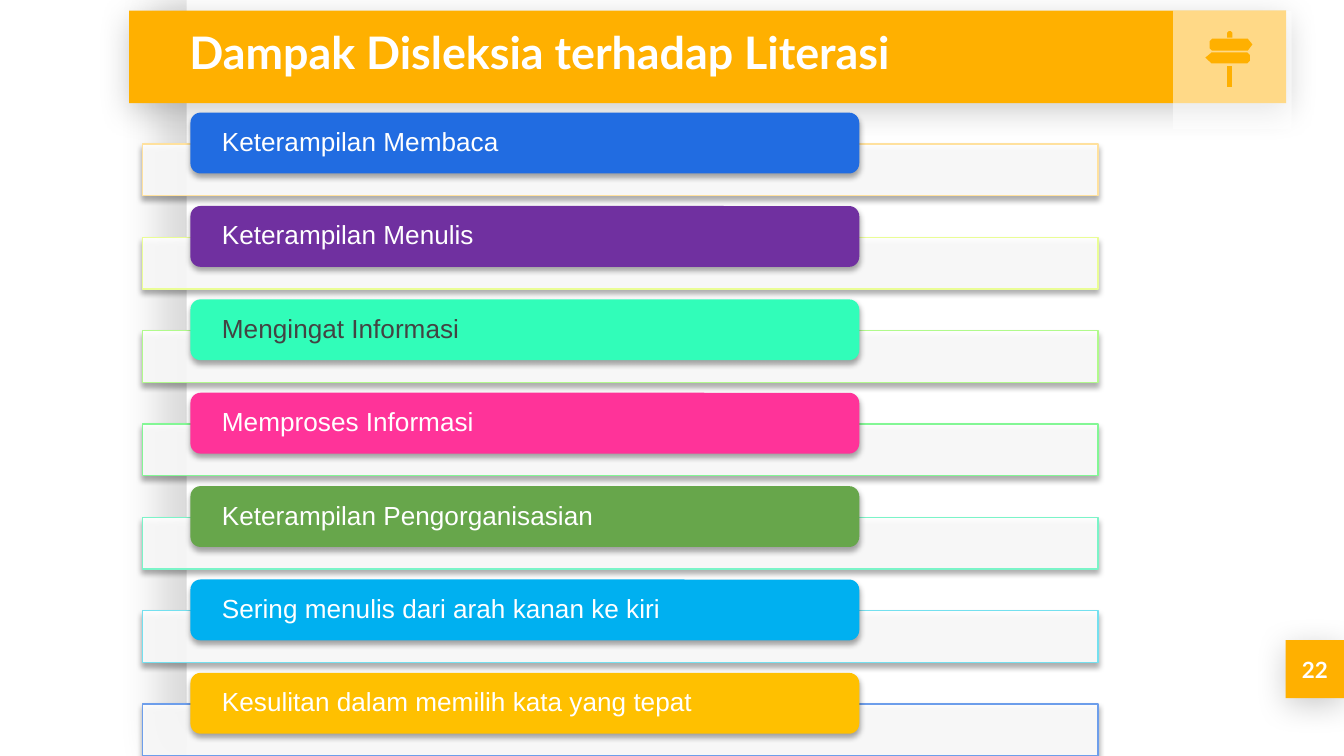
from lxml import etree
from pptx import Presentation
from pptx.dml.color import RGBColor
from pptx.enum.shapes import MSO_SHAPE
from pptx.enum.text import MSO_ANCHOR, MSO_AUTO_SIZE, PP_ALIGN
from pptx.oxml.ns import qn
from pptx.util import Cm, Pt

RECTANGLE = MSO_SHAPE.RECTANGLE
ROUNDED = MSO_SHAPE.ROUNDED_RECTANGLE
LEFT, CENTER = PP_ALIGN.LEFT, PP_ALIGN.CENTER

TITLE_ONLY_LAYOUT = 5
AMBER, WHITE, GRAY = "FFB000", "FFFFFF", "434343"

# Shadows: opacity in percent, blur and distance in points, direction in degrees
PAGE_SHADOW = (15, 22.5, 15, 180)
HEADER_SHADOW = (20, 16.9, 3.8, 90)
ROW_SHADOW = (35, 3.1, 1.8, 90)

ROW_TOP, ROW_PITCH = 2.13, 1.765
# Label, label fill, label text colour, frame line
ROWS = [
    ("Keterampilan Membaca", "216CE1", WHITE, "FFE19E"),
    ("Keterampilan Menulis", "7030A0", WHITE, "EAFD95"),
    ("Mengingat Informasi", "31FDB9", GRAY, "B1FA8C"),
    ("Memproses Informasi", "FF3399", WHITE, "83F795"),
    ("Keterampilan Pengorganisasian", "67A64B", WHITE, "7BF4C8"),
    ("Sering menulis dari arah kanan ke kiri", "00B0F0", WHITE, "74E0EF"),
    ("Kesulitan dalam memilih kata yang tepat", "FFC000", WHITE, "6D9EEB"),
]

# Signpost outlines, in hundredths of a centimetre
SIGNPOST = [
    [(2291, 73), (2358, 73), (2367, 84), (2358, 96), (2291, 96),
     (2286, 91), (2286, 78)],
    [(2290, 99), (2357, 99), (2362, 104), (2362, 115), (2357, 120),
     (2290, 120), (2278, 109)],
    [(2322, 59), (2326, 59), (2329, 62), (2329, 71), (2319, 71), (2319, 62)],
    [(2319, 125), (2329, 125), (2329, 165), (2319, 165)],
]


def set_values(target, values):
    for name, value in values.items():
        setattr(target, name, value)


def color(hex_string):
    return RGBColor.from_string(hex_string)


def paint(shape, fill, opacity=100, line=None):
    shape.shadow.inherit = False
    shape.fill.solid()
    shape.fill.fore_color.rgb = color(fill)
    if opacity < 100:
        tone = shape.fill._xPr.find(".//" + qn("a:srgbClr"))
        etree.SubElement(tone, qn("a:alpha"), val=str(opacity * 1000))
    if line:
        shape.line.color.rgb = color(line)
        shape.line.width = Pt(0.75)
    else:
        shape.line.fill.background()


def add_shadow(shape, opacity, blur, distance, direction):
    effects = shape._element.spPr.find(qn("a:effectLst"))
    outer = etree.SubElement(
        effects, qn("a:outerShdw"), blurRad=str(Pt(blur)), dist=str(Pt(distance)),
        dir=str(direction * 60000), algn="bl", rotWithShape="0")
    tone = etree.SubElement(outer, qn("a:srgbClr"), val="000000")
    etree.SubElement(tone, qn("a:alpha"), val=str(opacity * 1000))


def add_box(slide, kind, box, fill, shadow=None, opacity=100, line=None):
    """Add a preset shape; box is left, top, width and height in centimetres."""
    shape = slide.shapes.add_shape(kind, *map(Cm, box))
    paint(shape, fill, opacity, line)
    if shadow:
        add_shadow(shape, *shadow)
    return shape


def write(shape, text, font, align=LEFT, side=0.25, edge=0.25, spacing=1.0):
    frame = shape.text_frame
    set_values(frame, {
        "word_wrap": True, "auto_size": MSO_AUTO_SIZE.NONE,
        "vertical_anchor": MSO_ANCHOR.MIDDLE,
        "margin_left": Cm(side), "margin_right": Cm(side),
        "margin_top": Cm(edge), "margin_bottom": Cm(edge),
    })
    paragraph = frame.paragraphs[0]
    set_values(paragraph, {"alignment": align, "line_spacing": spacing})
    run = paragraph.add_run()
    run.text = text
    name, size, bold, tone = font
    set_values(run.font, {"name": name, "size": Pt(size), "bold": bold})
    run.font.color.rgb = color(tone)


def add_title(slide, text):
    title = slide.shapes.title
    slide.shapes._spTree.append(title._element)  # bring in front of the header band
    set_values(title, {"left": Cm(3.33), "top": Cm(0.15),
                       "width": Cm(18.72), "height": Cm(1.65)})
    write(title, text, ("Lato", 24, True, WHITE))


def add_signpost(slide):
    for start, *others in SIGNPOST:
        builder = slide.shapes.build_freeform(*start, scale=Cm(0.01))
        builder.add_line_segments(others, close=True)
        paint(builder.convert_to_shape(), AMBER)


def add_row(slide, top, text, fill, text_color, line):
    add_box(slide, RECTANGLE, (2.69, top + 0.59, 18.06, 0.98), WHITE,
            ROW_SHADOW, opacity=90, line=line)
    label = add_box(slide, ROUNDED, (3.6, top, 12.64, 1.15), fill, ROW_SHADOW)
    write(label, text, ("Arial", 14, False, text_color),
          side=0.54, edge=0, spacing=0.9)


def main():
    presentation = Presentation()
    set_values(presentation, {"slide_width": Cm(25.4), "slide_height": Cm(14.29)})
    slide = presentation.slides.add_slide(
        presentation.slide_layouts[TITLE_ONLY_LAYOUT])

    add_box(slide, RECTANGLE, (3.53, 0, 21.87, 14.29), WHITE, PAGE_SHADOW)
    page_number = add_box(slide, RECTANGLE, (24.3, 12.1, 1.1, 1.1), AMBER,
                          HEADER_SHADOW)
    write(page_number, "22", ("Lato", 12, True, WHITE), align=CENTER)
    add_box(slide, RECTANGLE, (2.44, 0.2, 21.87, 1.75), AMBER, HEADER_SHADOW)
    add_box(slide, RECTANGLE, (22.17, 0.2, 2.24, 2.24), WHITE, opacity=53)
    add_title(slide, "Dampak Disleksia terhadap Literasi")
    add_signpost(slide)

    for index, row in enumerate(ROWS):
        add_row(slide, ROW_TOP + index * ROW_PITCH, *row)

    presentation.save("out.pptx")


if __name__ == "__main__":
    main()
